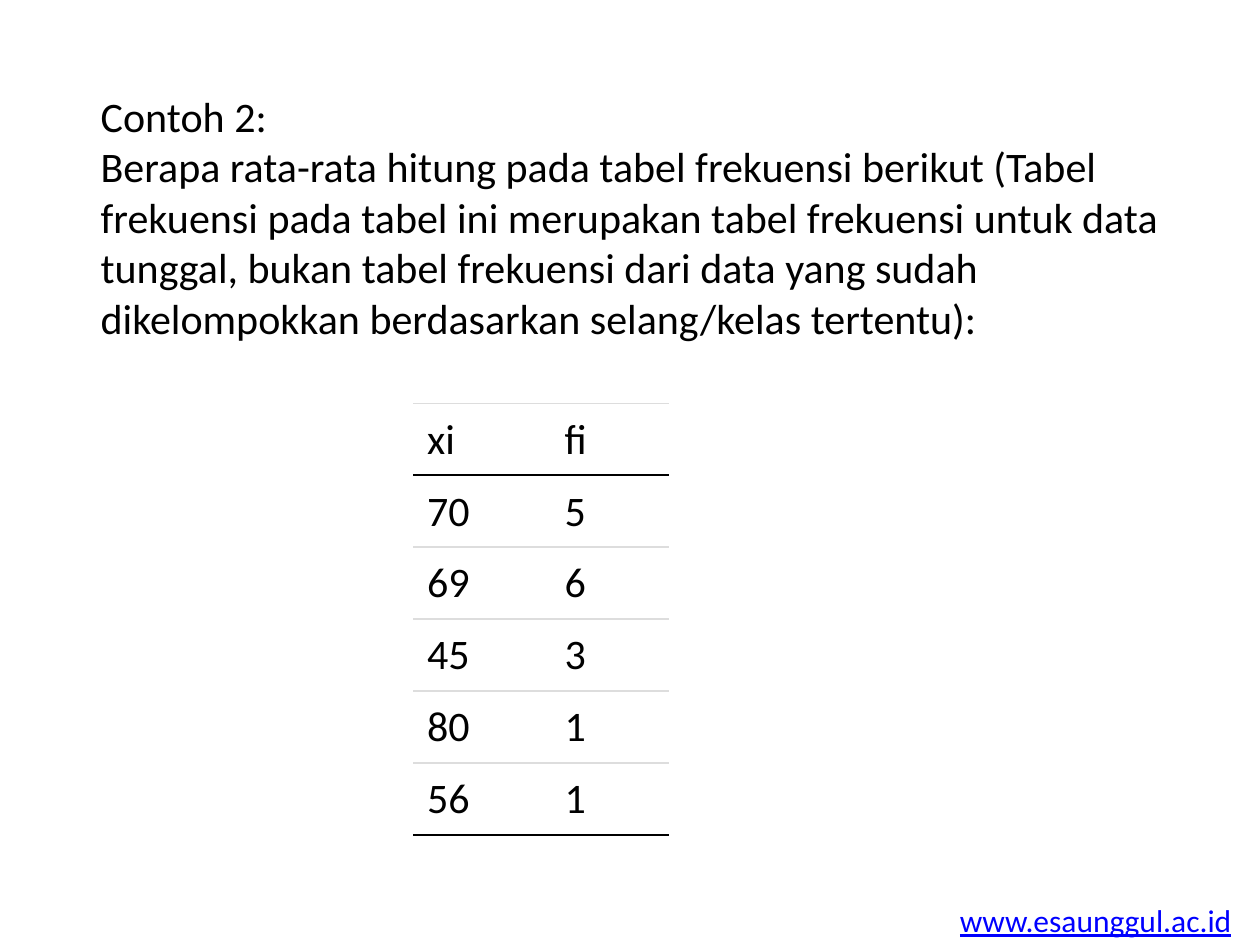
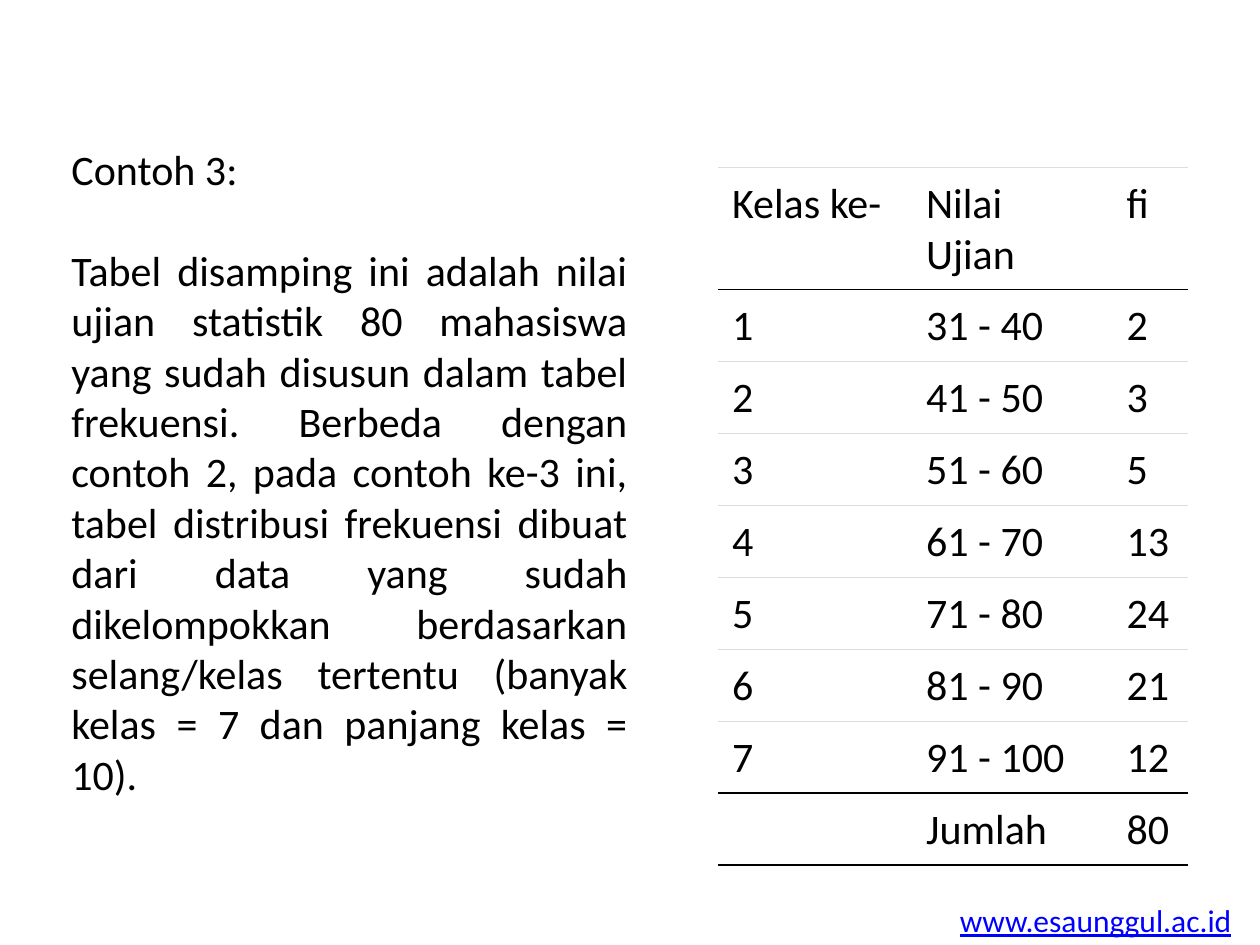
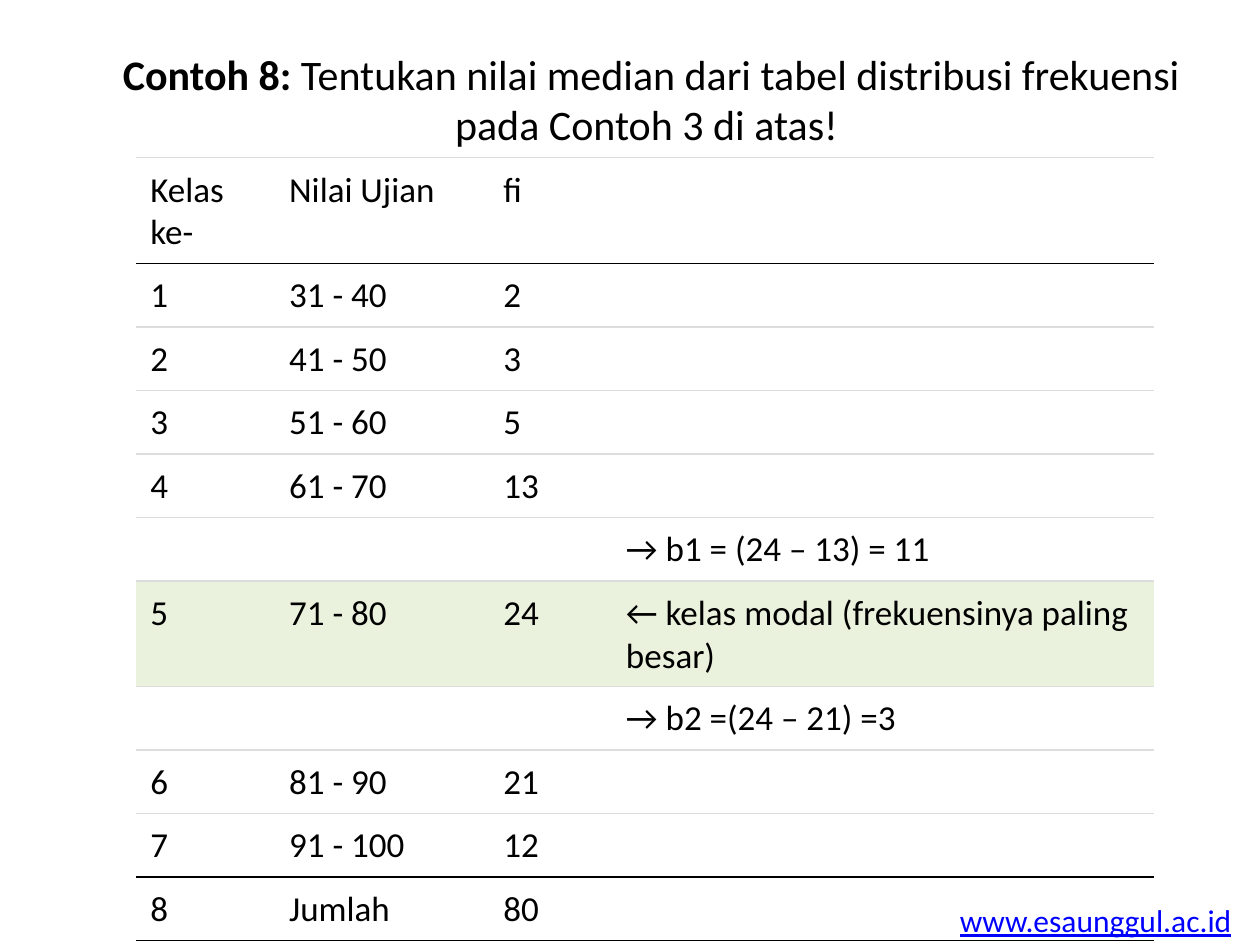
from dataclasses import dataclass
from lxml import etree
from pptx import Presentation
from pptx import util as u
from pptx.dml import color
from pptx.enum import text
from pptx.oxml import ns


@dataclass(frozen=True)
class Theme:
    font: str = "Calibri"
    ink: str = "000000"
    link: str = "0000FF"
    rule: str = "DDDDDD"
    mark: str = "EAF1DD"
    body: int = 24
    small: int = 20
    foot: int = 18
    gap: int = 29


T = Theme()

SITE = "www.esaunggul.ac.id"
MEAN = [
    "Contoh 2:",
    "Berapa rata-rata hitung pada tabel frekuensi berikut (Tabel frekuensi pada tabel ini "
    "merupakan tabel frekuensi untuk data tunggal, bukan tabel frekuensi dari data yang sudah "
    "dikelompokkan berdasarkan selang/kelas tertentu):",
]
GROUP = [
    "Contoh 3:",
    "Tabel disamping ini adalah nilai ujian statistik 80 mahasiswa yang sudah disusun dalam "
    "tabel frekuensi. Berbeda dengan contoh 2, pada contoh ke-3 ini, tabel distribusi frekuensi "
    "dibuat dari data yang sudah dikelompokkan berdasarkan selang/kelas tertentu (banyak kelas "
    "= 7 dan panjang kelas = 10).",
]
MEDIAN = [("Contoh 8: ", True),
          ("Tentukan nilai median dari tabel distribusi frekuensi pada Contoh 3 di atas! ", False)]

SINGLE = [("xi", "fi"), ("70", "5"), ("69", "6"), ("45", "3"), ("80", "1"), ("56", "1")]
HEAD = ("Kelas ke-", "Nilai Ujian", "fi")
SCORES = [
    ("1", "31 - 40", "2"),
    ("2", "41 - 50", "3"),
    ("3", "51 - 60", "5"),
    ("4", "61 - 70", "13"),
    ("5", "71 - 80", "24"),
    ("6", "81 - 90", "21"),
    ("7", "91 - 100", "12"),
]
SUM = ("Jumlah", "80")
MODAL = "← kelas modal (frekuensinya paling besar)"
BELOW = "→ b1 = (24 – 13) = 11"
ABOVE = "→ b2 =(24 – 21) =3"


def put(par, words, size=T.body, tint=T.ink, bold=False, line=False):
    run = par.add_run()
    run.text = words
    font = run.font
    font.name, font.size, font.bold, font.underline = T.font, u.Pt(size), bold, line
    font.color.rgb = color.RGBColor.from_string(tint)


def add_box(slide, *place):
    box = slide.shapes.add_textbox(*map(u.Cm, place))
    box.text_frame.word_wrap = True
    return box


def add_foot(deck, slide):
    box = add_box(slide, 19.1, 18.03, 6.05, 1.02)
    box.text_frame.word_wrap = False
    put(box.text_frame.paragraphs[0], SITE, T.foot, T.link, line=True)
    deck.slide_master.shapes.element.append(box.element)


def edge(cell, side, tint=None):
    props = cell._tc.get_or_add_tcPr()
    line = etree.SubElement(props, ns.qn("a:" + side), w=str(u.Pt(1)))
    if tint:
        fill = etree.SubElement(line, ns.qn("a:solidFill"))
        etree.SubElement(fill, ns.qn("a:srgbClr"), val=tint)
    else:
        etree.SubElement(line, ns.qn("a:noFill"))


def add_grid(slide, rows, left, top, cols, highs, size=T.body, dark=(), mark=None):
    frame = slide.shapes.add_table(len(rows), len(cols), u.Cm(left), u.Cm(top),
                                   u.Cm(sum(cols)), u.Cm(sum(highs)))
    grid = frame.table
    grid.first_row = grid.horz_banding = False
    for col, wide in zip(grid.columns, cols):
        col.width = u.Cm(wide)
    for i, row in enumerate(rows):
        grid.rows[i].height = u.Cm(highs[i])
        for j, words in enumerate(row):
            cell = grid.cell(i, j)
            cell.margin_left = cell.margin_right = u.Cm(0.28)
            cell.margin_top, cell.margin_bottom = u.Cm(0.22), u.Cm(0.17)
            edge(cell, "lnL")
            edge(cell, "lnR")
            for side, n in (("lnT", i - 1), ("lnB", i)):
                edge(cell, side, T.ink if n in dark else T.rule)
            if i == mark:
                cell.fill.solid()
                cell.fill.fore_color.rgb = color.RGBColor.from_string(T.mark)
            else:
                cell.fill.background()
            if words:
                put(cell.text_frame.paragraphs[0], words, size)


def show_mean(slide):
    frame = add_box(slide, 1.78, 1.7, 22.81, 14.27).text_frame
    put(frame.paragraphs[0], MEAN[0])
    put(frame.add_paragraph(), MEAN[1])
    last = len(SINGLE) - 1
    add_grid(slide, SINGLE, 8.33, 8.13, [2.77, 2.39], [1.45] * len(SINGLE), dark=(0, last))


def show_group(slide):
    frame = add_box(slide, 1.19, 2.18, 11.71, 14.63).text_frame
    frame.vertical_anchor = text.MSO_ANCHOR.MIDDLE
    put(frame.paragraphs[0], GROUP[0])
    par = frame.add_paragraph()
    par.alignment = text.PP_ALIGN.JUSTIFY
    par.space_before = u.Pt(T.gap)
    put(par, GROUP[1])
    rows = [HEAD, *SCORES, ("", *SUM)]
    last = len(rows) - 1
    add_grid(slide, rows, 14.48, 3.38, [3.91, 4.04, 1.52], [2.46] + [1.45] * last,
             dark=(0, last - 1, last))


def show_median(slide):
    title = slide.shapes.title
    title.left, title.top, title.width, title.height = map(u.Cm, (1.7, 0.85, 22.86, 3.4))
    frame = title.text_frame
    frame.vertical_anchor = text.MSO_ANCHOR.TOP
    par = frame.paragraphs[0]
    par.alignment = text.PP_ALIGN.CENTER
    for words, bold in MEDIAN:
        put(par, words, bold=bold)
    plain = [(*row, "") for row in [HEAD, *SCORES, ("8", *SUM)]]
    rows = [*plain[:5], ("", "", "", BELOW), (*SCORES[4], MODAL),
            ("", "", "", ABOVE), *plain[6:]]
    last, mark = len(rows) - 1, 6
    highs = [2.13 if i in (0, mark) else 1.28 for i in range(len(rows))]
    add_grid(slide, rows, 2.75, 3.18, [2.8, 4.32, 2.47, 10.93], highs, T.small,
             (0, last - 1, last), mark)


def main():
    deck = Presentation()
    deck.slide_width, deck.slide_height = u.Cm(25.4), u.Cm(19.05)
    titled, blank = deck.slide_layouts[5], deck.slide_layouts[6]
    pages = [(blank, show_mean), (blank, show_group), (titled, show_median)]
    for n, (form, show) in enumerate(pages):
        slide = deck.slides.add_slide(form)
        if n == 0:
            add_foot(deck, slide)
        show(slide)
    deck.save("out.pptx")


if __name__ == "__main__":
    main()
